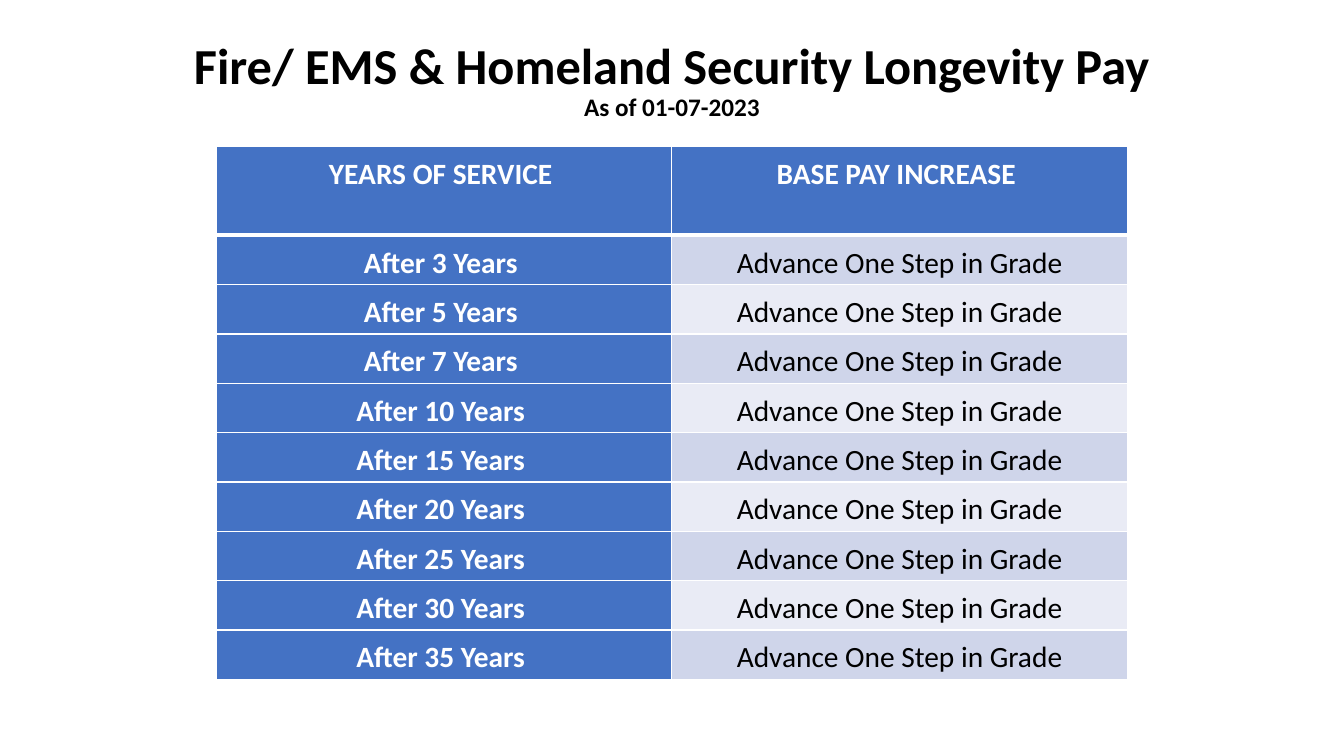
"""Build the longevity pay slide: a title above a table of pay steps."""
from lxml import etree
from pptx import Presentation
from pptx.dml.color import RGBColor
from pptx.enum.text import MSO_ANCHOR, PP_ALIGN
from pptx.oxml.ns import qn
from pptx.util import Cm, Pt

CENTER = PP_ALIGN.CENTER
MIDDLE = MSO_ANCHOR.MIDDLE
BLACK = RGBColor(0x00, 0x00, 0x00)
WHITE = RGBColor(0xFF, 0xFF, 0xFF)
BLUE = RGBColor(0x44, 0x72, 0xC4)
BANDS = (RGBColor(0xE9, 0xEB, 0xF5), RGBColor(0xCF, 0xD5, 0xEA))
FONT = "Calibri"
HEADS = ("YEARS OF SERVICE ", "BASE PAY INCREASE ")
YEARS = (3, 5, 7, 10, 15, 20, 25, 30, 35)
RAISE = "Advance One Step in Grade"


def add_run(para, text, size, color, bold, space):
    """Add one centred run to a paragraph."""
    para.alignment = CENTER
    para.line_spacing = space
    run = para.add_run()
    run.text = text
    font = run.font
    font.name, font.size, font.bold = FONT, Pt(size), bold
    font.color.rgb = color


def add_title(slide, lines):
    """Add the title box with one paragraph for each line."""
    box = slide.shapes.add_textbox(Cm(2.33), Cm(0), Cm(29.21), Cm(3.68))
    frame = box.text_frame
    frame.word_wrap = True
    frame.vertical_anchor = MIDDLE
    frame.margin_top, frame.margin_bottom = Cm(0.56), Cm(0.13)
    for i, (text, size) in enumerate(lines):
        para = frame.add_paragraph() if i else frame.paragraphs[0]
        add_run(para, text, size, BLACK, True, 0.9)


def add_edge(cell, side, width):
    """Draw one white edge of a cell."""
    props = cell._tc.get_or_add_tcPr()
    line = etree.SubElement(props, qn(f"a:ln{side}"), w=str(Pt(width)))
    fill = etree.SubElement(line, qn("a:solidFill"))
    etree.SubElement(fill, qn("a:srgbClr"), val=str(WHITE))


def fill_cell(cell, text, row, col):
    """Style a cell by its row and column and write its text."""
    strong = row == 0 or col == 0
    cell.margin_left = cell.margin_right = Cm(0.23)
    cell.margin_top = cell.margin_bottom = Cm(0.11)
    for side in "LRTB":
        thick = (side, row) in (("B", 0), ("T", 1))
        add_edge(cell, side, 3 if thick else 1)
    cell.fill.solid()
    cell.fill.fore_color.rgb = BLUE if strong else BANDS[row % 2]
    para = cell.text_frame.paragraphs[0]
    add_run(para, text, 21, WHITE if strong else BLACK, strong, 1.15)


def add_grid(slide, rows):
    """Add the table of service years and raises."""
    shape = slide.shapes.add_table(
        len(rows), 2, Cm(5.45), Cm(3.69), Cm(22.96), Cm(13.22))
    table = shape.table
    for col in table.columns:
        col.width = Cm(11.48)
    for i, texts in enumerate(rows):
        table.rows[i].height = Cm(1.22 if i else 2.24)
        for j, text in enumerate(texts):
            fill_cell(table.cell(i, j), text, i, j)


def main():
    """Build and save the slide."""
    deck = Presentation()
    deck.slide_width, deck.slide_height = Cm(33.87), Cm(19.05)
    slide = deck.slides.add_slide(deck.slide_layouts[6])
    add_title(slide, (("Fire/ EMS & Homeland Security Longevity Pay", 36),
                      ("As of 01-07-2023", 18)))
    add_grid(slide, [HEADS] + [(f"After {n} Years ", RAISE) for n in YEARS])
    deck.save("out.pptx")


if __name__ == "__main__":
    main()
